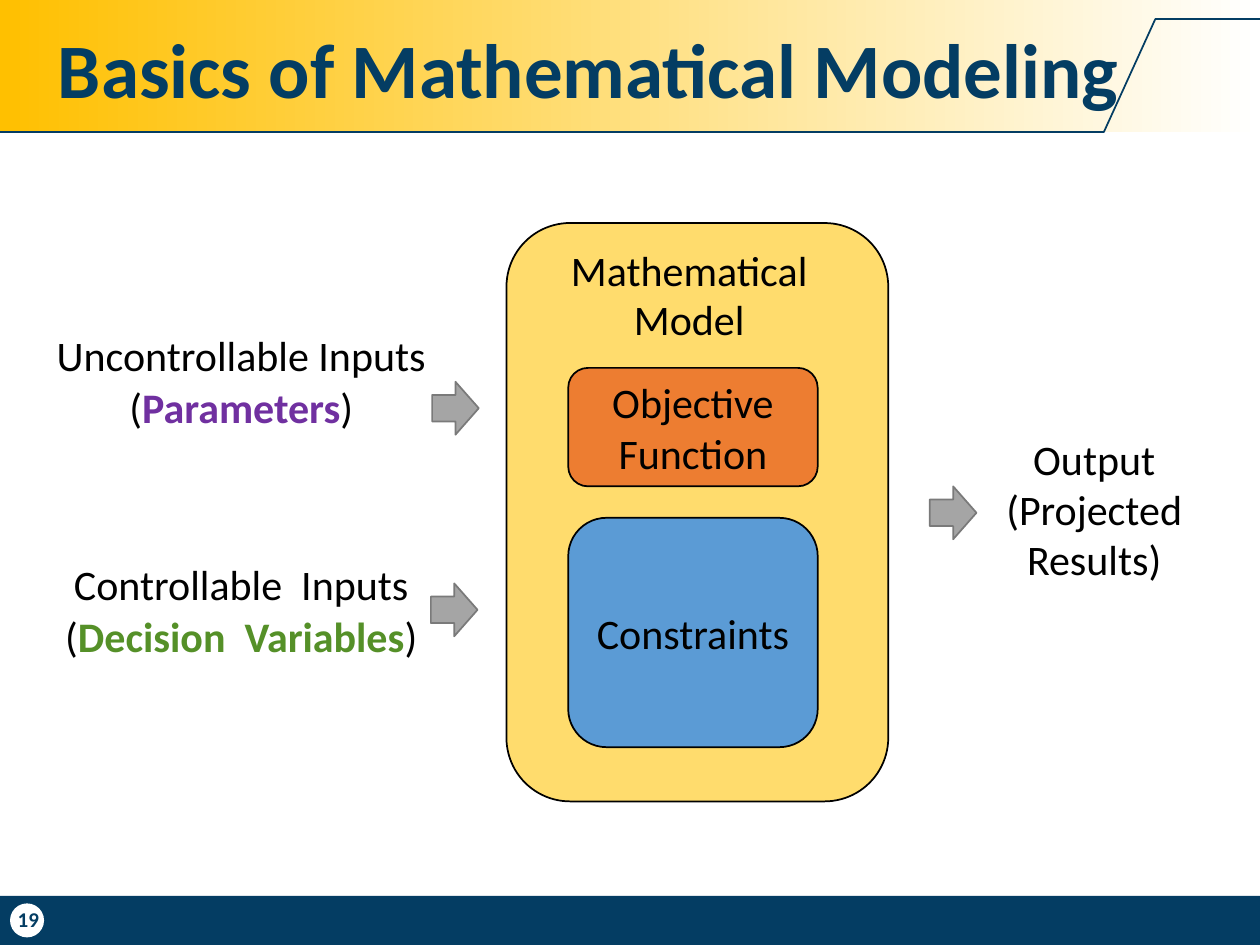
from dataclasses import dataclass
from typing import NamedTuple

from lxml.etree import SubElement
from pptx import Presentation
from pptx.dml.color import RGBColor
from pptx.enum.shapes import MSO_CONNECTOR, MSO_SHAPE
from pptx.enum.text import MSO_ANCHOR, MSO_AUTO_SIZE, PP_ALIGN
from pptx.oxml.ns import qn
from pptx.util import Pt

PX = 9144


@dataclass(frozen=True)
class Theme:
    """Colours, font and type sizes of the slide."""
    font: str = "Calibri"
    navy: str = "043D63"
    gold: str = "FFC000"
    white: str = "FFFFFF"
    black: str = "000000"
    model: str = "FFDC6D"
    objective: str = "ED7D31"
    constraints: str = "5B9BD5"
    arrow: str = "A5A5A5"
    arrow_line: str = "7A7A7A"
    parameters: str = "7030A0"
    decisions: str = "559028"
    title_size: int = 44
    body_size: int = 24
    number_size: int = 12


THEME = Theme()


class Area(NamedTuple):
    """A rectangle in px, a hundred to the inch."""
    left: int
    top: int
    width: int
    height: int

    def emu(self) -> list[int]:
        """Return the four lengths in EMU."""
        return [length * PX for length in self]


@dataclass(frozen=True)
class Panel:
    """A rounded panel of the model with an optional label."""
    area: Area
    fill: str
    label: str = ""


class Span(NamedTuple):
    """A stretch of text with one look."""
    text: str
    color: str = THEME.black
    bold: bool = False


@dataclass(frozen=True)
class Caption:
    """A centred caption, one list of spans for each paragraph."""
    area: Area
    lines: list[list[Span]]
    inset: int = 2
    spacing: float | Pt = 0.99


PANELS = [
    Panel(Area(402, 177, 303, 459), THEME.model),
    Panel(Area(451, 292, 198, 94), THEME.objective, "Objective Function"),
    Panel(Area(451, 411, 198, 182), THEME.constraints, "Constraints"),
]
CAPTIONS = [
    Caption(Area(13, 261, 357, 84), [
        [Span("Uncontrollable Inputs")],
        [Span("("), Span("Parameters", THEME.parameters, True), Span(")")],
    ]),
    Caption(Area(40, 443, 303, 82), [
        [Span("Controllable  Inputs")],
        [Span("("), Span("Decision  Variables", THEME.decisions, True), Span(")")],
    ]),
    Caption(Area(775, 344, 187, 122), [[Span("Output (Projected Results)")]]),
    Caption(Area(429, 191, 236, 82), [[Span("Mathematical Model")]], 4, Pt(28)),
]
ARROWS = [(343, 303), (342, 463), (738, 386)]
RULES = [(0, 105, 876, 105), (876, 105, 917, 15), (917, 15, 1000, 15)]


def style_font(font, size: int, color: str, bold: bool = False) -> None:
    """Apply the theme font with a size and colour."""
    font.name = THEME.font
    font.size = Pt(size)
    font.bold = bold
    font.color.rgb = RGBColor.from_string(color)


def set_insets(frame, left: int, top: int, right: int, bottom: int) -> None:
    """Set the four text margins in px."""
    frame.margin_left, frame.margin_top = left * PX, top * PX
    frame.margin_right, frame.margin_bottom = right * PX, bottom * PX


def draw_shape(page, kind, area: Area, fill: str, line: str | None = None):
    """Draw a flat preset shape, outlined when a line colour is given."""
    shape = page.shapes.add_shape(kind, *area.emu())
    shape.shadow.inherit = False
    shape.fill.solid()
    shape.fill.fore_color.rgb = RGBColor.from_string(fill)
    if line:
        shape.line.color.rgb = RGBColor.from_string(line)
        shape.line.width = Pt(1)
    else:
        shape.line.fill.background()
    return shape


def draw_panel(page, panel: Panel) -> None:
    """Draw a rounded panel with its centred label."""
    shape = draw_shape(page, MSO_SHAPE.ROUNDED_RECTANGLE, panel.area, panel.fill, THEME.black)
    if panel.label:
        frame = shape.text_frame
        frame.word_wrap = True
        frame.vertical_anchor = MSO_ANCHOR.MIDDLE
        frame.text = panel.label
        para = frame.paragraphs[0]
        para.alignment = PP_ALIGN.CENTER
        style_font(para.runs[0].font, THEME.body_size, THEME.black)


def draw_caption(page, caption: Caption) -> None:
    """Write a centred caption beside or inside the model."""
    frame = page.shapes.add_textbox(*caption.area.emu()).text_frame
    frame.word_wrap = True
    set_insets(frame, 0, caption.inset, 0, 0)
    for index, line in enumerate(caption.lines):
        para = frame.add_paragraph() if index else frame.paragraphs[0]
        para.alignment = PP_ALIGN.CENTER
        para.line_spacing = caption.spacing
        if index:
            para.space_before = Pt(1.1)
        for span in line:
            run = para.add_run()
            run.text = span.text
            style_font(run.font, THEME.body_size, span.color, span.bold)


def draw_rule(page, ends: tuple[int, int, int, int]) -> None:
    """Draw one stretch of the navy line under the title."""
    rule = page.shapes.add_connector(MSO_CONNECTOR.STRAIGHT, *[end * PX for end in ends])
    rule.line.color.rgb = RGBColor.from_string(THEME.navy)
    rule.line.width = Pt(1)
    SubElement(rule.element.spPr, qn("a:effectLst"))


def draw_header(page) -> None:
    """Draw the gradient band, its rules and the title."""
    band = draw_shape(page, MSO_SHAPE.RECTANGLE, Area(0, 0, 1000, 105), THEME.gold)
    band.fill.gradient()
    band.fill.gradient_angle = 0
    for stop, color, position in zip(band.fill.gradient_stops, (THEME.gold, THEME.white), (0, 1)):
        stop.color.rgb = RGBColor.from_string(color)
        stop.position = position
    for ends in RULES:
        draw_rule(page, ends)

    title = page.shapes.title
    title.left, title.top, title.width, title.height = Area(36, 11, 896, 94).emu()
    page.shapes[-1].element.addnext(title.element)
    frame = title.text_frame
    frame.text = "Basics of Mathematical Modeling"
    frame.auto_size = MSO_AUTO_SIZE.NONE
    frame.vertical_anchor = MSO_ANCHOR.MIDDLE
    para = frame.paragraphs[0]
    para.alignment = PP_ALIGN.LEFT
    para.line_spacing = 0.9
    style_font(para.runs[0].font, THEME.title_size, THEME.navy, True)


def draw_footer(page) -> None:
    """Draw the bottom bar and the page number."""
    draw_shape(page, MSO_SHAPE.RECTANGLE, Area(0, 711, 1000, 39), THEME.navy)
    draw_shape(page, MSO_SHAPE.OVAL, Area(8, 717, 27, 27), THEME.white)
    frame = page.shapes.add_textbox(*Area(0, 709, 45, 41).emu()).text_frame
    frame.word_wrap = True
    frame.vertical_anchor = MSO_ANCHOR.MIDDLE
    frame.text = "19"
    para = frame.paragraphs[0]
    para.alignment = PP_ALIGN.CENTER
    style_font(para.runs[0].font, THEME.number_size, THEME.navy, True)


def main() -> None:
    """Build and save the slide."""
    deck = Presentation()
    deck.slide_width, deck.slide_height = 1000 * PX, 750 * PX
    page = deck.slides.add_slide(deck.slide_layouts[5])
    draw_header(page)
    draw_footer(page)
    for panel in PANELS:
        draw_panel(page, panel)
    for caption in CAPTIONS:
        draw_caption(page, caption)
    for left, top in ARROWS:
        draw_shape(page, MSO_SHAPE.RIGHT_ARROW, Area(left, top, 37, 42), THEME.arrow, THEME.arrow_line)
    deck.save("out.pptx")


if __name__ == "__main__":
    main()
